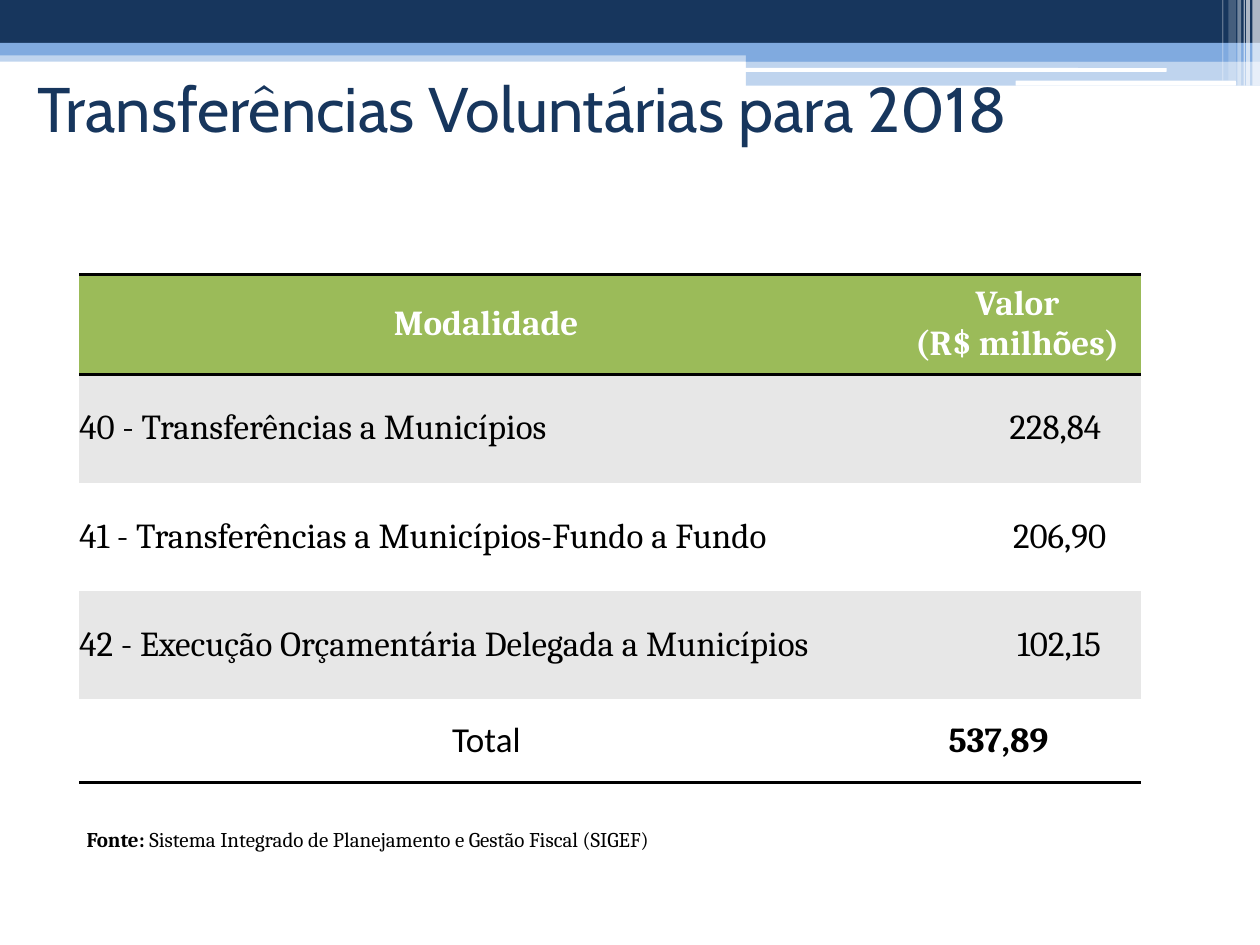
from dataclasses import dataclass
from typing import Optional

from lxml.etree import SubElement
from pptx import Presentation
from pptx.dml.color import RGBColor
from pptx.enum.shapes import MSO_SHAPE
from pptx.enum.text import MSO_ANCHOR, PP_ALIGN
from pptx.oxml.ns import qn
from pptx.util import Inches, Pt


@dataclass(frozen=True)
class Theme:
    navy: str = "17365D"
    sky: str = "80AADF"
    white: str = "FFFFFF"
    black: str = "000000"
    green: str = "9BBB59"
    gray: str = "E7E7E7"
    serif: str = "Cambria"
    sans: str = "Calibri"
    head: str = "Cabin"
    title: int = 36
    body: int = 20
    note: int = 12
    rule: int = 2


@dataclass(frozen=True)
class Band:
    left: float
    top: float
    width: float
    height: float
    color: str
    alpha: int = 100
    round: bool = False


@dataclass(frozen=True)
class Entry:
    text: str
    fill: str
    align: PP_ALIGN = PP_ALIGN.CENTER
    inset: float = 0
    color: str = "000000"
    bold: bool = False
    font: str = "Cambria"
    lines: tuple = ()


T = Theme()
RIGHT = PP_ALIGN.RIGHT
LEFT = PP_ALIGN.LEFT

BANDS = [
    Band(0, 0.4, 10, 0.09, T.sky, 50),
    Band(0, 0, 10, 0.34, T.navy),
    Band(0, 0.34, 10, 0.1, T.sky),
    Band(5.92, 0.39, 4.08, 0.1, T.sky),
    Band(5.92, 0.48, 4.08, 0.2, T.sky, 50),
    Band(5.91, 0.54, 3.35, 0.03, T.white, round=True),
    Band(8.06, 0.64, 1.75, 0.04, T.white, round=True),
] + [
    Band(left, 0, width, height, T.white, alpha)
    for left, width, height, alpha in [
        (9.94, 0.06, 0.68, 65),
        (9.89, 0.03, 0.68, 65),
        (9.87, 0.01, 0.68, 60),
        (9.82, 0.03, 0.68, 40),
        (9.75, 0.06, 0.64, 20),
        (9.7, 0.01, 0.64, 30),
    ]
]

ITEMS = [
    ("40 - Transferências a Municípios", "228,84", 0.32),
    ("41 - Transferências a Municípios-Fundo a Fundo", "206,90", 0.28),
    ("42 - Execução Orçamentária Delegada a Municípios", "102,15", 0.32),
]
WIDTHS = [6.46, 1.97]
HEIGHTS = [0.79, 0.86, 0.86, 0.86, 0.66]


def style(run, size: int, font: str, color: str, bold: bool = False) -> None:
    run.font.size = Pt(size)
    run.font.name = font
    run.font.bold = bold
    run.font.color.rgb = RGBColor.from_string(color)


def draw_band(slide, band: Band) -> None:
    kind = MSO_SHAPE.ROUNDED_RECTANGLE if band.round else MSO_SHAPE.RECTANGLE
    shape = slide.shapes.add_shape(
        kind, Inches(band.left), Inches(band.top), Inches(band.width), Inches(band.height)
    )
    shape.shadow.inherit = False
    shape.line.fill.background()
    shape.fill.solid()
    shape.fill.fore_color.rgb = RGBColor.from_string(band.color)
    if band.alpha < 100:
        color = shape.fill._xPr.find(".//" + qn("a:srgbClr"))
        SubElement(color, qn("a:alpha"), val=str(band.alpha * 1000))


def draw_edge(cell, tag: str) -> None:
    props = cell._tc.get_or_add_tcPr()
    line = SubElement(props, qn(tag), w=str(Pt(T.rule)))
    fill = SubElement(line, qn("a:solidFill"))
    SubElement(fill, qn("a:srgbClr"), val=T.black)


def fill_cell(cell, entry: Entry) -> None:
    for tag in entry.lines:
        draw_edge(cell, tag)
    cell.fill.solid()
    cell.fill.fore_color.rgb = RGBColor.from_string(entry.fill)
    cell.margin_left = cell.margin_top = cell.margin_bottom = 0
    cell.margin_right = Inches(entry.inset)
    cell.vertical_anchor = MSO_ANCHOR.MIDDLE
    cell.text_frame.text = entry.text
    for para in cell.text_frame.paragraphs:
        para.alignment = entry.align
        for run in para.runs:
            style(run, T.body, entry.font, entry.color, entry.bold)


def list_rows() -> list:
    edges = ("a:lnT", "a:lnB")
    rows = [[
        Entry(text, T.green, color=T.white, bold=True, lines=edges)
        for text in ("Modalidade", "Valor\n(R$ milhões)")
    ]]
    for spot, (name, value, inset) in enumerate(ITEMS):
        fill = T.white if spot % 2 else T.gray
        rows.append([Entry(name, fill, LEFT), Entry(value, fill, RIGHT, inset)])
    rows.append([
        Entry("Total", T.white, font=T.sans, lines=edges[1:]),
        Entry("537,89", T.white, RIGHT, 0.74, bold=True, lines=edges[1:]),
    ])
    return rows


def draw_table(slide) -> None:
    rows = list_rows()
    frame = slide.shapes.add_table(
        len(rows), len(WIDTHS), Inches(0.63), Inches(2.18),
        Inches(sum(WIDTHS)), Inches(sum(HEIGHTS)),
    )
    table = frame.table
    table.first_row = table.horz_banding = False
    table._tbl.tblPr.find(qn("a:tableStyleId")).text = "{2D5ABB26-0587-4C30-8999-92F81FD0307C}"
    for col, width in zip(table.columns, WIDTHS):
        col.width = Inches(width)
    for row, height, entries in zip(table.rows, HEIGHTS, rows):
        row.height = Inches(height)
        for cell, entry in zip(row.cells, entries):
            fill_cell(cell, entry)


def set_title(slide, text: str) -> None:
    title = slide.shapes.title
    title.left, title.top = Inches(0.2), Inches(0.52)
    title.width, title.height = Inches(9.29), Inches(0.67)
    frame = title.text_frame
    frame.text = text
    frame.vertical_anchor = MSO_ANCHOR.MIDDLE
    frame.paragraphs[0].alignment = LEFT
    style(frame.paragraphs[0].runs[0], T.title, T.head, T.navy)
    slide.shapes._spTree.append(title._element)


def draw_note(slide, label: str, text: str) -> None:
    box = slide.shapes.add_textbox(Inches(0.59), Inches(6.51), Inches(7), Inches(0.3))
    box.text_frame.word_wrap = True
    para = box.text_frame.paragraphs[0]
    para.text = label
    para.add_run().text = text
    for run, bold in zip(para.runs, (True, False)):
        style(run, T.note, T.serif, T.black, bold)


def main() -> None:
    deck = Presentation()
    deck.slide_width, deck.slide_height = Inches(10), Inches(7.5)
    slide = deck.slides.add_slide(deck.slide_layouts[5])
    for band in BANDS:
        draw_band(slide, band)
    set_title(slide, "Transferências Voluntárias para 2018")
    draw_table(slide)
    draw_note(slide, "Fonte: ", "Sistema Integrado de Planejamento e Gestão Fiscal (SIGEF)")
    deck.save("out.pptx")


if __name__ == "__main__":
    main()
